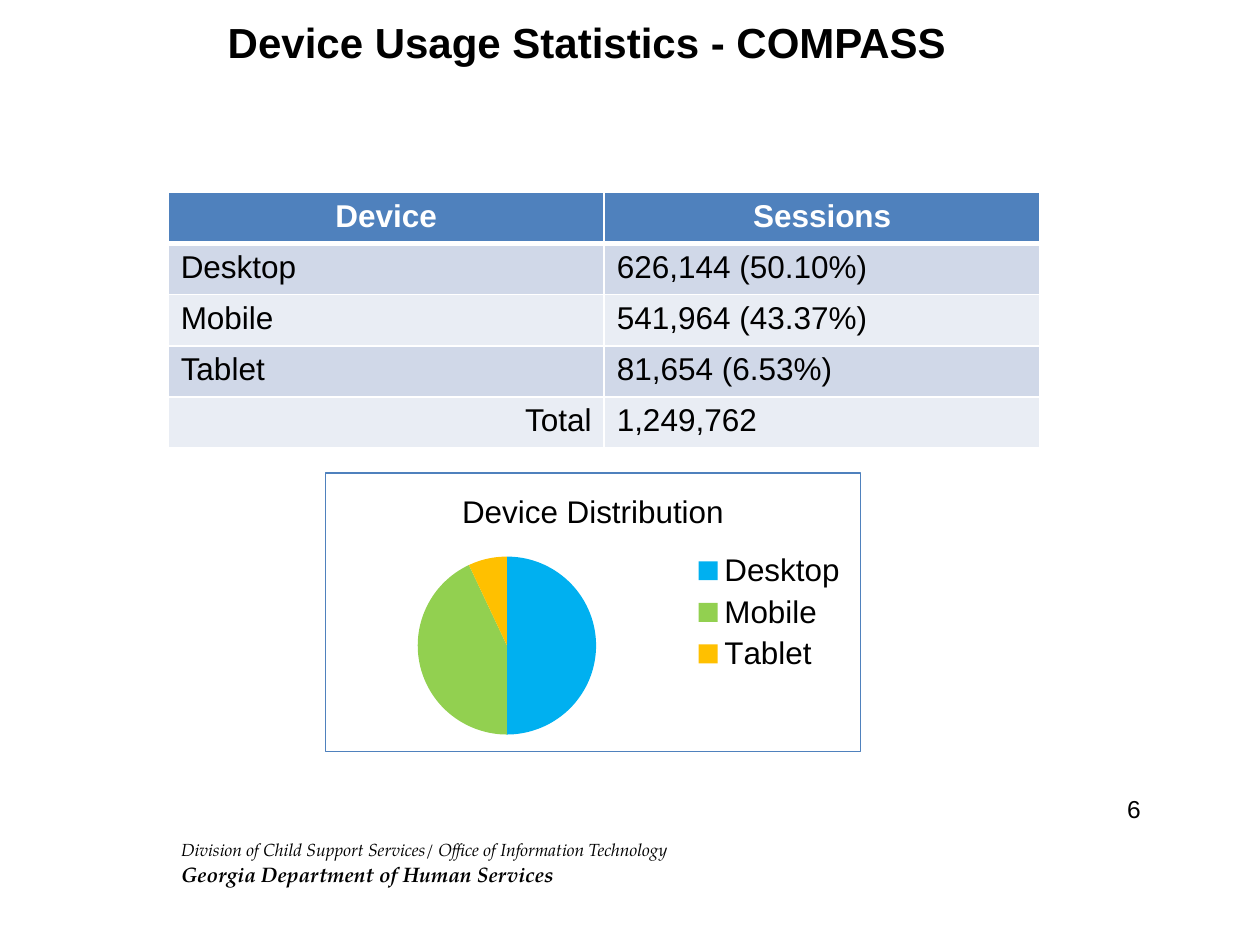
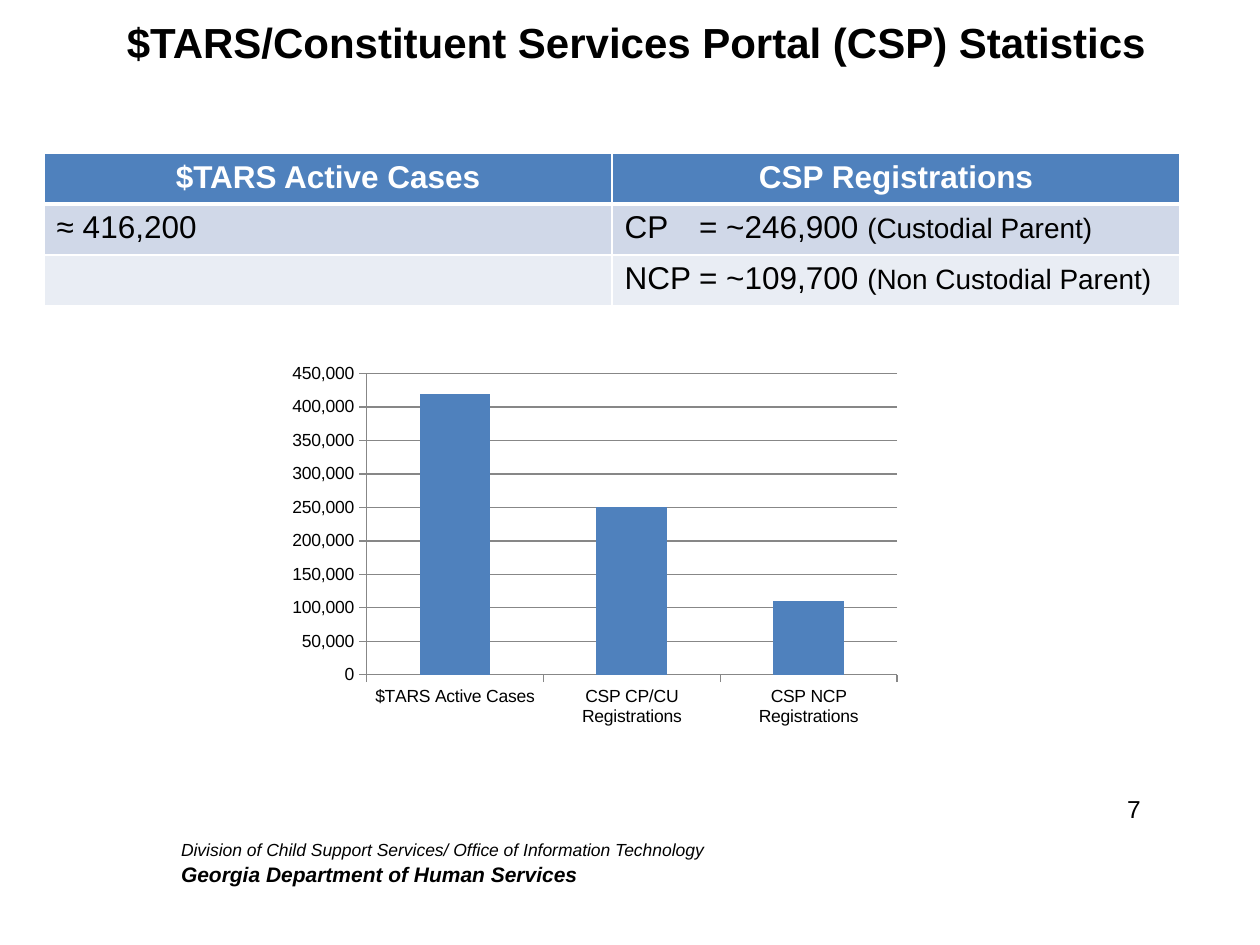
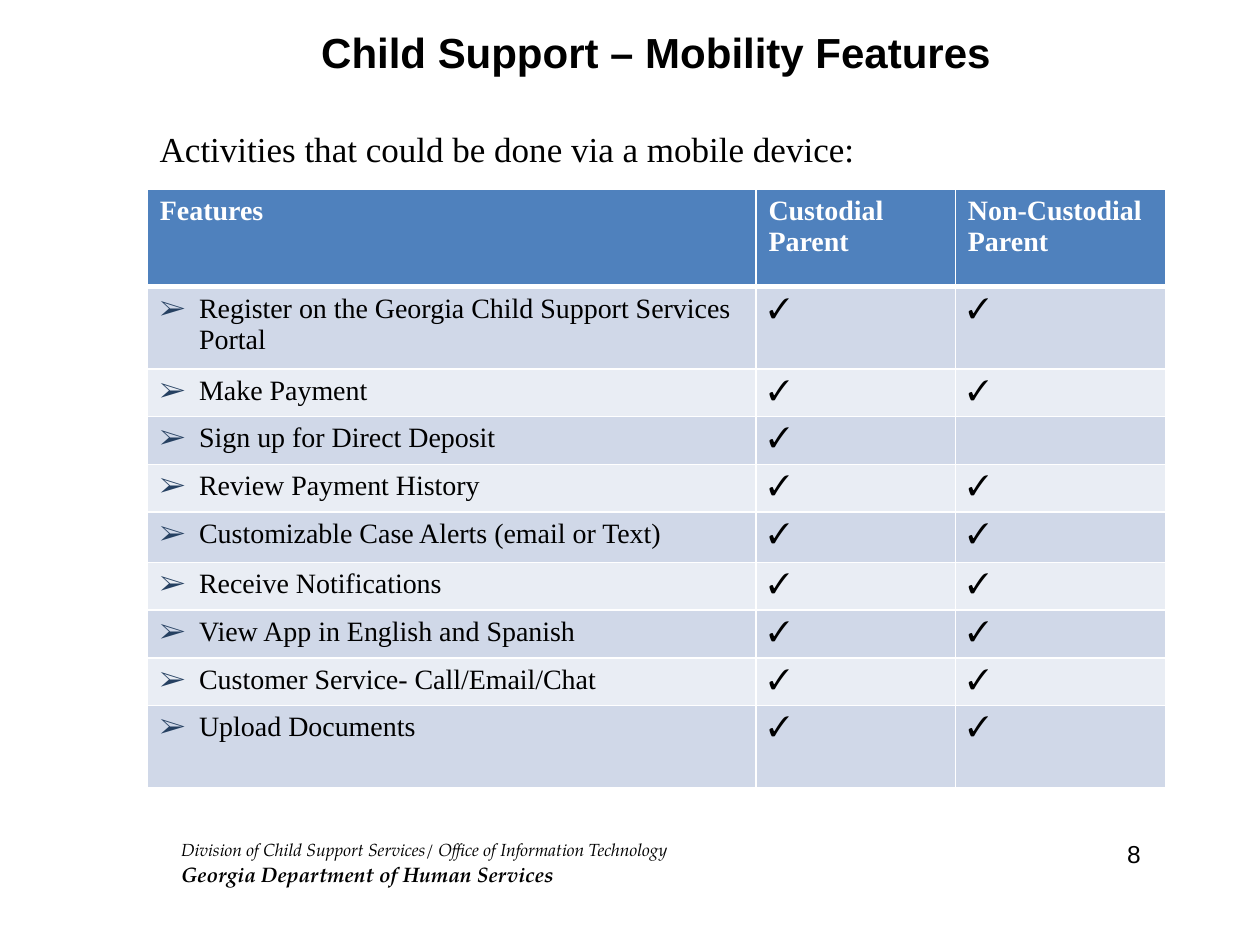
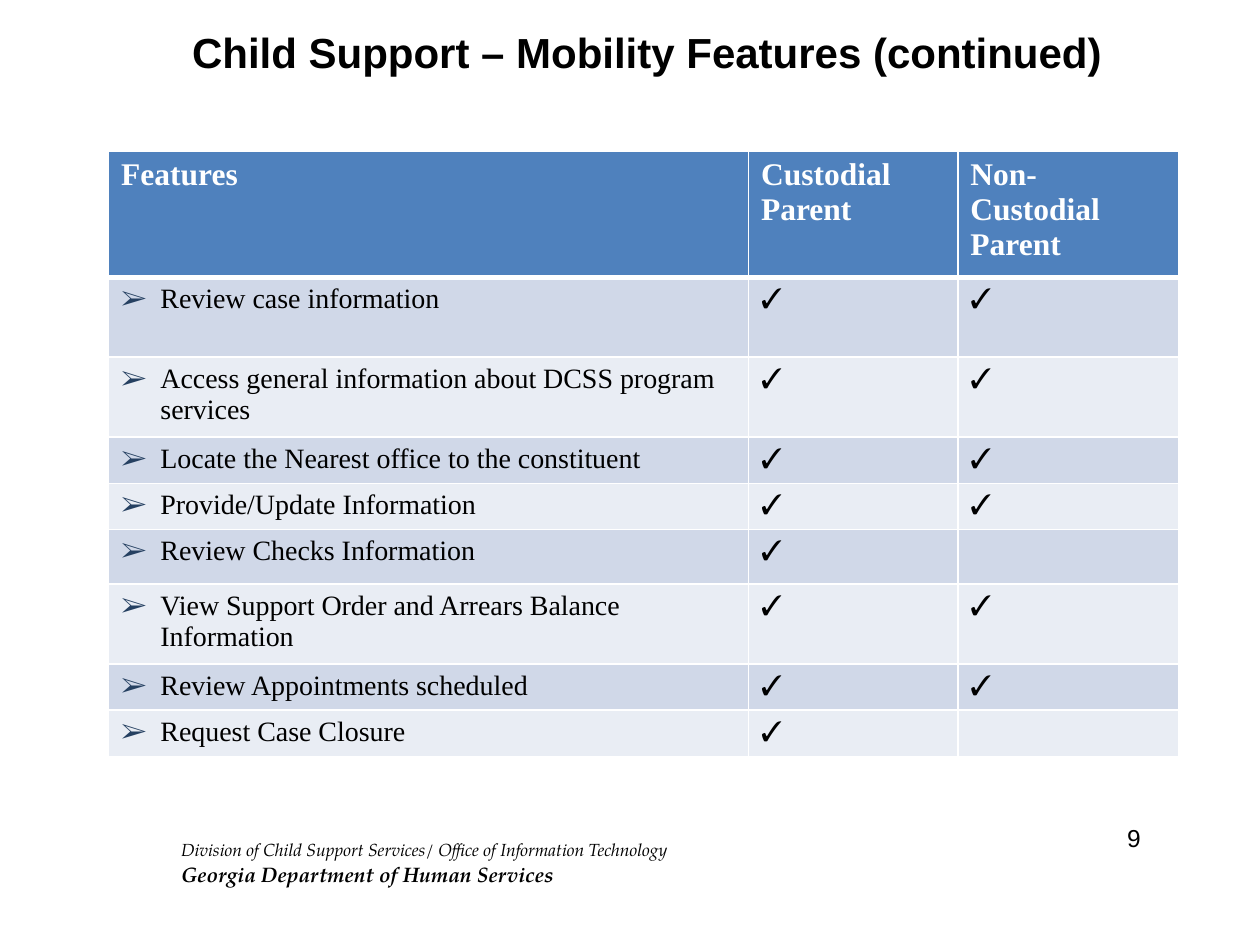
from lxml import etree
from pptx import Presentation, util as u
from pptx.chart.data import CategoryChartData
from pptx.dml.color import RGBColor
from pptx.enum import chart as ch, text as tx
from pptx.oxml import parse_xml
from pptx.oxml.ns import nsdecls, qn

BLUE, PALE, LIGHT = "4F81BD", "D0D8E8", "E9EDF4"
WHITE, BLACK, NAVY, GREY = "FFFFFF", "000000", "254061", "878787"
TICK = "✓"
LEFT, MID, RIGHT = tx.PP_ALIGN.LEFT, tx.PP_ALIGN.CENTER, tx.PP_ALIGN.RIGHT
TOP, CENTRE = tx.MSO_ANCHOR.TOP, tx.MSO_ANCHOR.MIDDLE


def rgb(code):
    return RGBColor.from_string(code)


def style(font, face, size, code=BLACK, bold=False, slant=False):
    font.name, font.size = face, u.Pt(size)
    font.bold, font.italic = bold, slant
    font.color.rgb = rgb(code)


heads = ["Features", "Custodial Parent", "Non-Custodial Parent"]
pages = [
    dict(no=6, title="Device Usage Statistics - COMPASS",
         head=(1.28, 0.2, 21.1, 1.6), hold=TOP, foot="TeX Gyre Pagella", low=15.88,
         at=(3.39, 3.88), cols=[8.79] * 2, rows=[1.03] * 5,
         face="Arial", big=18, size=18, list=False,
         cells=[["Device", "Sessions"], ["Desktop", "626,144 (50.10%)"],
                ["Mobile", "541,964 (43.37%)"], ["Tablet", "81,654 (6.53%)"],
                ["Total", "1,249,762"]]),
    dict(no=7, title="$TARS/Constituent Services Portal (CSP) Statistics",
         head=(1.28, 0.2, 23.1, 1.6), hold=TOP, foot="Arial", low=15.88,
         at=(0.89, 3.09), cols=[11.45] * 2, rows=[1.02, 1.03, 1.03],
         face="Arial", big=18, size=18, list=False,
         cells=[["$TARS Active Cases", "CSP Registrations"],
                ["≈ 416,200", "CP\t= ~246,900 "], ["", "NCP\t= ~109,700 "]]),
    dict(no=8, title="Child Support – Mobility Features",
         head=(1.45, 0.2, 23.55, 1.68), hold=CENTRE, foot="TeX Gyre Pagella", low=16.79,
         at=(2.97, 3.81), cols=[12.27, 4.02, 4.24],
         rows=[1.97, 1.66] + [0.96] * 3 + [1.02] + [0.96] * 3 + [1.65],
         face="Times New Roman", big=16, size=16, list=True,
         cells=[heads,
                ["Register on the Georgia Child Support Services Portal", TICK, TICK],
                ["Make Payment", TICK, TICK],
                ["Sign up for Direct Deposit", TICK, ""],
                ["Review Payment History", TICK, TICK],
                ["Customizable Case Alerts (email or Text)", TICK, TICK],
                ["Receive Notifications", TICK, TICK],
                ["View App in English and Spanish", TICK, TICK],
                ["Customer Service- Call/Email/Chat", TICK, TICK],
                ["Upload Documents", TICK, TICK]]),
    dict(no=9, title="Child Support – Mobility Features (continued)",
         head=(1.27, 0.2, 23.55, 1.68), hold=CENTRE, foot="TeX Gyre Pagella", low=16.46,
         at=(2.19, 3.05), cols=[12.9, 4.22, 4.45],
         rows=[2.53, 1.61, 1.61, 0.93, 0.93, 1.1, 1.6, 0.93, 0.92],
         face="Times New Roman", big=18, size=16, list=True,
         cells=[heads,
                ["Review case information", TICK, TICK],
                ["Access general information about DCSS program services", TICK, TICK],
                ["Locate the Nearest office to the constituent", TICK, TICK],
                ["Provide/Update Information", TICK, TICK],
                ["Review Checks Information", TICK, ""],
                ["View Support Order and Arrears Balance Information", TICK, TICK],
                ["Review Appointments scheduled", TICK, TICK],
                ["Request Case Closure", TICK, ""]]),
]

deck = Presentation()
deck.slide_width, deck.slide_height = u.Cm(25.4), u.Cm(19.05)
slides, grids = [], []

for page in pages:
    slide = deck.slides.add_slide(deck.slide_layouts[5])
    slides.append(slide)
    title = slide.shapes.title
    title.left, title.top, title.width, title.height = map(u.Cm, page["head"])
    title.text_frame.text = page["title"]
    title.text_frame.vertical_anchor = page["hold"]
    para = title.text_frame.paragraphs[0]
    para.alignment = MID
    style(para.font, "Arial", 24, bold=True)

    notes = [
        ("Georgia Department of Human Services", (3.4, 17.25, 23, 0.76),
         (page["foot"], 12, BLACK, True, True)),
        ("Division of Child Support Services/ Office of Information Technology",
         (3.4, 16.79, 23, 0.69), (page["foot"], 10, BLACK, False, True)),
        (str(page["no"]), (22.47, page["low"], 1.3, 0.86), ("Arial", 14)),
    ]
    if page["no"] == 8:
        notes.append(("Activities that could be done via a mobile device:",
                      (2.97, 2.45, 18.14, 1.22), ("Times New Roman", 20)))
    for words, place, look in notes:
        frame = slide.shapes.add_textbox(*map(u.Cm, place)).text_frame
        frame.word_wrap = True
        frame.text = words
        style(frame.paragraphs[0].font, *look)

    cols, rows = page["cols"], page["rows"]
    size = (sum(cols), sum(rows))
    grid = slide.shapes.add_table(len(rows), len(cols),
                                  *map(u.Cm, page["at"] + size)).table
    grids.append(grid)
    for col, wide in zip(grid.columns, cols):
        col.width = u.Cm(wide)
    for r, (row, tall) in enumerate(zip(grid.rows, rows)):
        row.height = u.Cm(tall)
        for c, cell in enumerate(row.cells):
            props = cell._tc.get_or_add_tcPr()
            for side in "LRTB":
                thick = (side == "B" and r == 0) or (side == "T" and r == 1)
                line = etree.SubElement(props, qn("a:ln" + side),
                                        w=str(u.Pt(3 if thick else 1)))
                fill = etree.SubElement(line, qn("a:solidFill"))
                etree.SubElement(fill, qn("a:srgbClr"), val=WHITE)
            cell.fill.solid()
            cell.fill.fore_color.rgb = rgb(BLUE if r == 0 else PALE if r % 2 else LIGHT)
            words = page["cells"][r][c]
            cell.text = words
            para = cell.text_frame.paragraphs[0]
            if page["list"] and r and c == 0:
                form = para._p.get_or_add_pPr()
                form.set("marL", str(u.Cm(0.79)))
                form.set("indent", str(u.Cm(-0.79)))
                tint = etree.SubElement(form, qn("a:buClr"))
                etree.SubElement(tint, qn("a:srgbClr"), val=NAVY)
                etree.SubElement(form, qn("a:buFont"), typeface=page["face"])
                etree.SubElement(form, qn("a:buChar"), char="➢")
            elif "\t" in words:
                tabs = etree.SubElement(para._p.get_or_add_pPr(), qn("a:tabLst"))
                etree.SubElement(tabs, qn("a:tab"), pos=str(u.Cm(1.5)), algn="l")
            if r == 0:
                style(para.font, page["face"], page["big"], WHITE, True)
                para.alignment = LEFT if page["list"] else MID
            else:
                style(para.font, page["face"], page["size"])
                para.alignment = RIGHT if words == "Total" else LEFT

for r, note in enumerate(["(Custodial Parent)", "(Non Custodial Parent)"], 1):
    run = grids[1].cell(r, 1).text_frame.paragraphs[0].add_run()
    run.text = note
    run.font.size = u.Pt(16)

data = CategoryChartData()
data.categories = ["Desktop", "Mobile", "Tablet"]
data.add_series("Series 1", [50, 43, 7])
pie = slides[0].shapes.add_chart(ch.XL_CHART_TYPE.PIE, u.Cm(6.55), u.Cm(9.52),
                                 u.Cm(10.81), u.Cm(5.65), data).chart
style(pie.font, "Arial", 18)
pie.has_title = True
pie.chart_title.text_frame.text = "Device Distribution"
style(pie.chart_title.text_frame.paragraphs[0].font, "Arial", 18)
pie.has_legend = True
pie.legend.position = ch.XL_LEGEND_POSITION.RIGHT
pie.legend.include_in_layout = False
style(pie.legend.font, "Arial", 18)
for i, code in enumerate(["00B0F0", "92D050", "FFC000"]):
    fill = pie.plots[0].series[0].points[i].format.fill
    fill.solid()
    fill.fore_color.rgb = rgb(code)
edge = parse_xml(f'<c:spPr {nsdecls("c", "a")}><a:ln w="{u.Pt(0.75)}"><a:solidFill>'
                 f'<a:srgbClr val="{BLUE}"/></a:solidFill></a:ln></c:spPr>')
pie._chartSpace.find(qn("c:txPr")).addprevious(edge)

data = CategoryChartData(number_format="#,##0")
data.categories = ["$TARS Active Cases", "CSP CP/CU Registrations", "CSP NCP Registrations"]
data.add_series("Series 1", [420000, 250000, 110000])
bars = slides[1].shapes.add_chart(ch.XL_CHART_TYPE.COLUMN_CLUSTERED, u.Cm(5.64), u.Cm(7.18),
                                  u.Cm(12.7), u.Cm(7.62), data).chart
style(bars.font, "Arial", 10)
bars.has_title = bars.has_legend = False
plot = bars.plots[0]
plot.gap_width, plot.vary_by_categories = 150, False
fill = plot.series[0].format.fill
fill.solid()
fill.fore_color.rgb = rgb(BLUE)
axis = bars.value_axis
axis.minimum_scale, axis.maximum_scale, axis.major_unit = 0, 450000, 50000
axis.tick_labels.number_format = "#,##0"
axis.tick_labels.number_format_is_linked = False
axis.has_major_gridlines = True
for part in (axis, bars.category_axis):
    part.major_tick_mark = ch.XL_TICK_MARK.OUTSIDE
for part in (axis, axis.major_gridlines, bars.category_axis):
    part.format.line.color.rgb = rgb(GREY)
    part.format.line.width = u.Pt(0.75)

deck.save("out.pptx")
